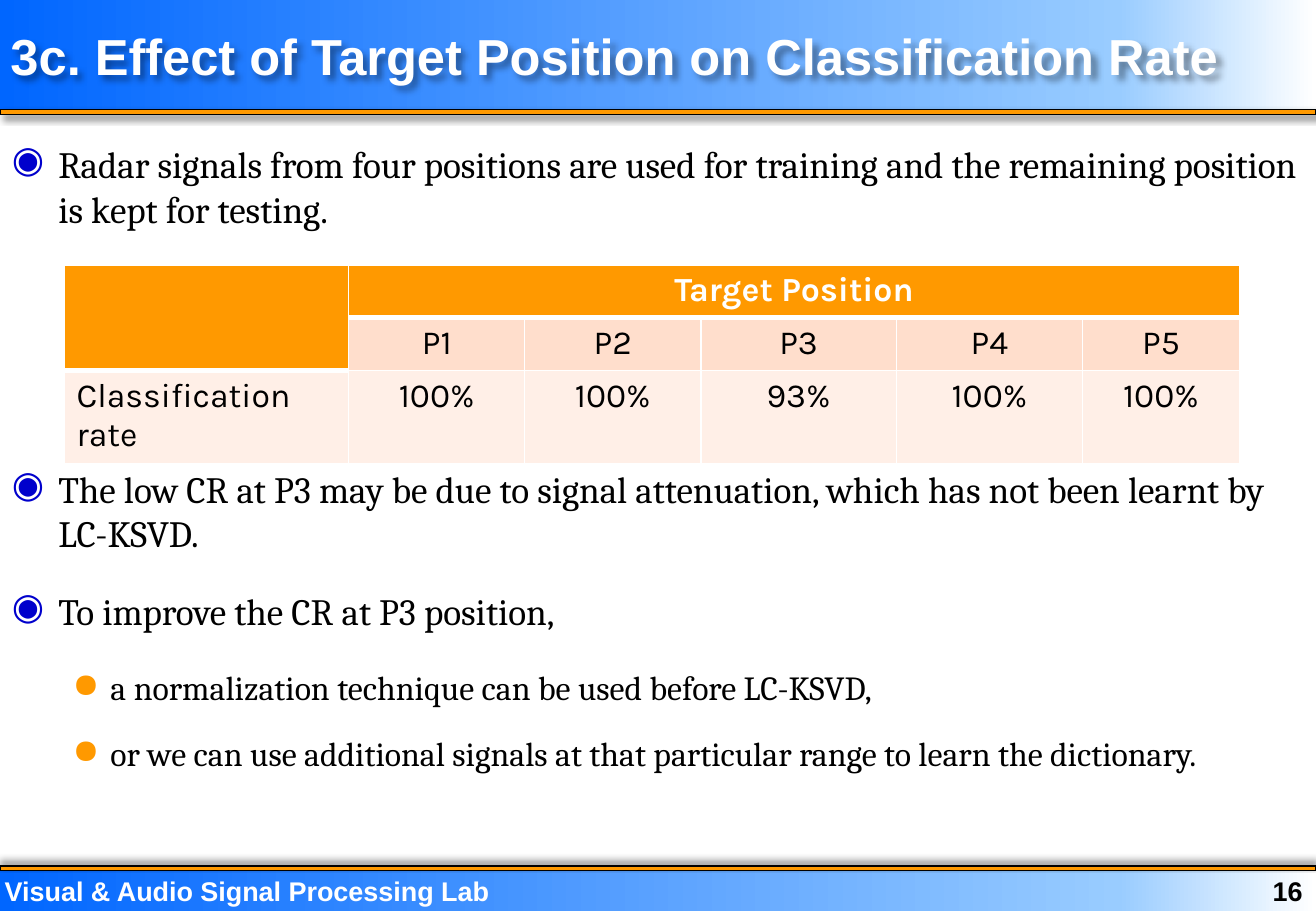
"""Build the slide on target position and classification rate."""
from copy import deepcopy
from typing import NamedTuple

from lxml.etree import SubElement
from pptx import Presentation
from pptx.dml.color import RGBColor
from pptx.enum.shapes import MSO_SHAPE
from pptx.enum.text import MSO_ANCHOR, PP_ALIGN
from pptx.oxml.ns import qn
from pptx.util import Cm, Pt

BLACK = RGBColor(0, 0, 0)
WHITE = RGBColor(255, 255, 255)
BLUE = RGBColor(0, 0x66, 0xFF)
SKY = RGBColor(0x99, 0xCC, 0xFF)
ORANGE = RGBColor(0xFF, 0x99, 0)
NAVY = RGBColor(0, 0, 0xCC)
PEACH = RGBColor(0xFF, 0xDE, 0xCC)
CREAM = RGBColor(0xFF, 0xEF, 0xE7)
WIDTH, HEIGHT = 27.51, 19.05
GRADIENT = ((0, BLUE), (0.85, SKY), (1, WHITE))


class Area(NamedTuple):
    left: float
    top: float
    width: float
    height: float


class Level(NamedTuple):
    size: int
    margin: float
    hanging: float
    after: int
    mark: str
    color: RGBColor


class Label(NamedTuple):
    text: str
    area: Area
    size: int
    color: RGBColor
    align: PP_ALIGN
    insets: tuple[float, float]
    anchor: MSO_ANCHOR


class Stripe(NamedTuple):
    top: float
    shadow_angle: int


POINT = Level(22, 0.97, 0.97, 10, "◉", NAVY)
DETAIL = Level(20, 2.06, 0.79, 5, "●", ORANGE)
BANDS = (Area(0, 18.21, WIDTH, 0.84), Area(0, 0, WIDTH, 2.31))
STRIPES = (Stripe(18.11, 270), Stripe(2.29, 45))
TITLE = Label("3c. Effect of Target Position on Classification Rate",
              Area(-0.03, 0.2, WIDTH, 1.93), 30, WHITE, PP_ALIGN.LEFT, (0.25, 0.25), MSO_ANCHOR.MIDDLE)
FOOTERS = (
    Label("Visual & Audio Signal Processing Lab", Area(0, 18.29, 13.44, 0.76),
          16, WHITE, PP_ALIGN.LEFT, (0.1, 0), MSO_ANCHOR.TOP),
    Label("16", Area(24.56, 18.29, 2.67, 0.76), 16, BLACK, PP_ALIGN.RIGHT, (0.1, 0), MSO_ANCHOR.TOP),
)
BODIES = (
    (Area(0, 2.84, WIDTH, 2.4), (
        (POINT, "Radar signals from four positions are used for training "
                "and the remaining position is kept for testing."),)),
    (Area(0, 9.62, WIDTH, 8), (
        (POINT, "The low CR at P3 may be due to signal attenuation, "
                "which has not been learnt by LC-KSVD."),
        (POINT, "To improve the CR at P3 position,"),
        (DETAIL, "a normalization technique can be used before LC-KSVD,"),
        (DETAIL, "or we can use additional signals at that particular range to learn the dictionary."))),
)
COLUMNS = (5.94, 3.68, 3.68, 4.09, 3.89, 3.28)
ROWS = (1.07, 1.07, 1.9)
RATES = (
    ("", "Target Position", "", "", "", ""),
    ("", "P1", "P2", "P3", "P4", "P5"),
    ("Classification rate", "100%", "100%", "93%", "100%", "100%"),
)


def place(area: Area) -> list:
    """Return the area as slide lengths."""
    return [Cm(length) for length in area]


def add_shadow(shape, angle: int) -> None:
    """Give the shape a soft black shadow."""
    effects = SubElement(shape.element.spPr, qn("a:effectLst"))
    shadow = SubElement(effects, qn("a:outerShdw"), blurRad=str(Pt(4)), dist=str(Pt(3)),
                        dir=str(angle * 60000), algn="ctr", rotWithShape="0")
    color = SubElement(shadow, qn("a:srgbClr"), val=str(BLACK))
    SubElement(color, qn("a:alpha"), val="40000")


def add_band(page, area: Area) -> None:
    """Draw a gradient band."""
    band = page.shapes.add_shape(MSO_SHAPE.RECTANGLE, *place(area))
    band.shadow.inherit = False
    band.line.fill.background()
    band.fill.gradient()
    band.fill.gradient_angle = 0
    stops = band.element.spPr.find(".//" + qn("a:gsLst"))
    stops.append(deepcopy(stops[-1]))
    for stop, (position, color) in zip(band.fill.gradient_stops, GRADIENT):
        stop.position = position
        stop.color.rgb = color


def add_stripe(page, stripe: Stripe) -> None:
    """Draw a thin orange stripe with a shadow."""
    shape = page.shapes.add_shape(MSO_SHAPE.RECTANGLE, *place(Area(0, stripe.top, WIDTH, 0.1)))
    shape.fill.solid()
    shape.fill.fore_color.rgb = ORANGE
    shape.line.color.rgb = BLACK
    shape.line.width = Pt(0.75)
    add_shadow(shape, stripe.shadow_angle)


def style(para, name: str, size: int, color: RGBColor, bold: bool = False) -> None:
    """Set the font of a paragraph."""
    para.font.name = name
    para.font.size = Pt(size)
    para.font.bold = bold
    para.font.color.rgb = color


def add_label(page, label: Label):
    """Add a bold one-line text box."""
    box = page.shapes.add_textbox(*place(label.area))
    frame = box.text_frame
    frame.word_wrap = True
    frame.vertical_anchor = label.anchor
    frame.margin_left, frame.margin_right = (Cm(inset) for inset in label.insets)
    frame.margin_top = frame.margin_bottom = 0
    para = frame.paragraphs[0]
    para.text = label.text
    para.alignment = label.align
    style(para, "Arial", label.size, label.color, bold=True)
    return box


def add_bullets(page, area: Area, points: tuple[tuple[Level, str], ...]) -> None:
    """Add a text box of bulleted paragraphs."""
    frame = page.shapes.add_textbox(*place(area)).text_frame
    frame.word_wrap = True
    for index, (level, text) in enumerate(points):
        para = frame.add_paragraph() if index else frame.paragraphs[0]
        para.text = text
        para.level = int(level is DETAIL)
        para.space_before = Pt(10 if index else 0)
        para.space_after = Pt(level.after)
        props = para._p.get_or_add_pPr()
        props.set("marL", str(Cm(level.margin)))
        props.set("indent", str(-Cm(level.hanging)))
        SubElement(SubElement(props, qn("a:buClr")), qn("a:srgbClr"), val=str(level.color))
        SubElement(props, qn("a:buChar"), char=level.mark)
        style(para, "Cambria", level.size, BLACK)


def add_borders(cell, bottom: int) -> None:
    """Draw white borders round a cell."""
    props = cell._tc.get_or_add_tcPr()
    for index, (side, width) in enumerate((("L", 1), ("R", 1), ("T", 1), ("B", bottom))):
        line = props.makeelement(qn(f"a:ln{side}"), {"w": str(Pt(width))})
        fill = SubElement(line, qn("a:solidFill"))
        SubElement(fill, qn("a:srgbClr"), val=str(WHITE))
        props.insert(index, line)


def add_rates(page) -> None:
    """Add the table of classification rates."""
    area = Area(1.35, 5.54, sum(COLUMNS), sum(ROWS))
    table = page.shapes.add_table(len(ROWS), len(COLUMNS), *place(area)).table
    for column, width in zip(table.columns, COLUMNS):
        column.width = Cm(width)
    for row, height in zip(table.rows, ROWS):
        row.height = Cm(height)
    for r, texts in enumerate(RATES):
        for c, text in enumerate(texts):
            cell = table.cell(r, c)
            header = r == 0 or (r == 1 and c == 0)
            cell.fill.solid()
            cell.fill.fore_color.rgb = ORANGE if header else (PEACH if r == 1 else CREAM)
            add_borders(cell, 3 if header else 1)
            para = cell.text_frame.paragraphs[0]
            para.text = text
            para.alignment = PP_ALIGN.CENTER if c else PP_ALIGN.LEFT
            style(para, "Karla", 20, WHITE if header else BLACK, bold=header)
    table.cell(0, 0).merge(table.cell(1, 0))
    table.cell(0, 1).merge(table.cell(0, 5))


def main() -> None:
    """Build and save the deck."""
    deck = Presentation()
    deck.slide_width, deck.slide_height = Cm(WIDTH), Cm(HEIGHT)
    page = deck.slides.add_slide(deck.slide_layouts[6])
    for band in BANDS:
        add_band(page, band)
    for stripe in STRIPES:
        add_stripe(page, stripe)
    for footer in FOOTERS:
        add_label(page, footer)
    add_shadow(add_label(page, TITLE), 45)
    for area, points in BODIES:
        add_bullets(page, area, points)
    add_rates(page)
    deck.save("out.pptx")


if __name__ == "__main__":
    main()
